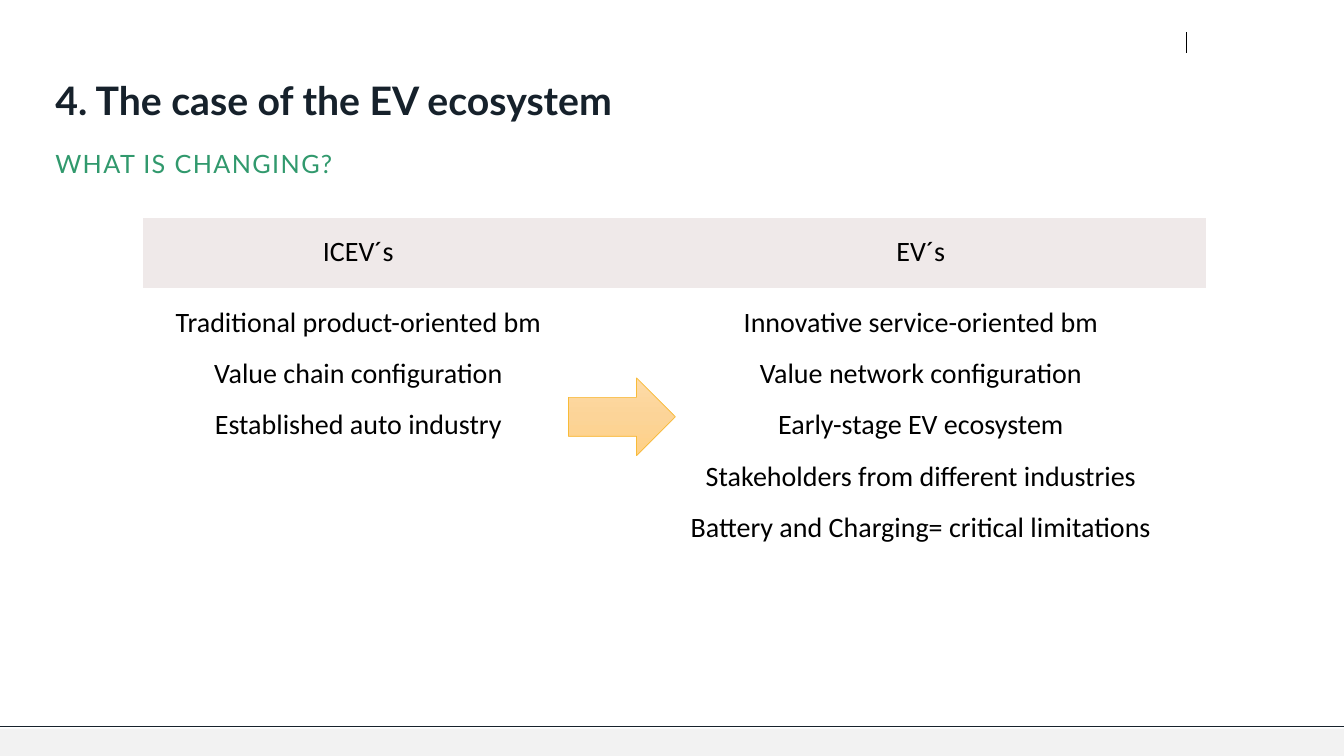
from copy import deepcopy

from lxml.etree import SubElement
from pptx import Presentation
from pptx.dml.color import RGBColor
from pptx.enum.shapes import MSO_CONNECTOR, MSO_SHAPE
from pptx.enum.text import MSO_ANCHOR, PP_ALIGN
from pptx.oxml.ns import qn
from pptx.util import Inches, Pt

NAVY = RGBColor(0x16, 0x21, 0x2B)
GREEN = RGBColor(0x31, 0x99, 0x6D)
BLACK = RGBColor(0x00, 0x00, 0x00)
FOOTER_GREY = RGBColor(0xF2, 0xF2, 0xF2)
HEADER_GREY = RGBColor(0xEF, 0xE9, 0xE9)
ARROW_EDGE = RGBColor(0xF8, 0xBB, 0x38)
ARROW_BLEND = [
    RGBColor(0xFE, 0xDB, 0xA7),
    RGBColor(0xFC, 0xD4, 0x98),
    RGBColor(0xFF, 0xD0, 0x85),
]
PLAIN_TABLE = "{2D5ABB26-0587-4C30-8999-92F81FD0307C}"

COMPARISON = [
    (["ICEV´s"], [], ["EV´s"]),
    (
        [
            "Traditional product-oriented bm",
            "Value chain configuration",
            "Established auto industry",
        ],
        [],
        [
            "Innovative service-oriented bm",
            "Value network configuration",
            "Early-stage EV ecosystem",
            "Stakeholders from different industries",
            "Battery and Charging= critical limitations",
        ],
    ),
]


class SlideBuilder:
    heading_font = "Lato"
    body_font = "Calibri"
    body_size = 20

    def __init__(self, deck):
        self.column = deck.slide_width / 100
        self.row = deck.slide_height / 100
        self.slide = deck.slides.add_slide(deck.slide_layouts[6])

    def across(self, columns):
        return round(columns * self.column)

    def down(self, rows):
        return round(rows * self.row)

    def place(self, left, top, width, height):
        return self.across(left), self.down(top), self.across(width), self.down(height)

    def style(self, paragraph, font, size, color, bold=False):
        for run in paragraph.runs:
            run.font.name = font
            run.font.size = Pt(size)
            run.font.bold = bold
            run.font.color.rgb = color

    def band(self, area, color):
        band = self.slide.shapes.add_shape(MSO_SHAPE.RECTANGLE, *self.place(*area))
        band.shadow.inherit = False
        band.fill.solid()
        band.fill.fore_color.rgb = color
        band.line.fill.background()

    def rule(self, start, end, color):
        rule = self.slide.shapes.add_connector(
            MSO_CONNECTOR.STRAIGHT, *self.place(*start, *end)
        )
        rule.line.color.rgb = color
        rule.line.width = Pt(1)
        SubElement(rule._element.spPr, qn("a:effectLst"))

    def heading(self, area, wording, size, color, bold=False, anchor=MSO_ANCHOR.TOP, tracking=0):
        frame = self.slide.shapes.add_textbox(*self.place(*area)).text_frame
        frame.word_wrap = True
        frame.vertical_anchor = anchor
        frame.text = wording
        line = frame.paragraphs[0]
        line.line_spacing = 0.9
        self.style(line, self.heading_font, size, color, bold)
        if tracking:
            line.runs[0].font._element.set("spc", str(tracking * 100))

    def comparison(self, left, top, widths, heights, rows):
        area = self.place(left, top, sum(widths), sum(heights))
        table = self.slide.shapes.add_table(len(rows), len(widths), *area).table
        table.horz_banding = False
        table._tbl.tblPr.find(qn("a:tableStyleId")).text = PLAIN_TABLE
        for column, width in zip(table.columns, widths):
            column.width = self.across(width)
        for row, height in zip(table.rows, heights):
            row.height = self.down(height)
        for row_index, row in enumerate(rows):
            for column_index, points in enumerate(row):
                self.table_cell(table.cell(row_index, column_index), points, row_index == 0)

    def table_cell(self, cell, points, is_header):
        cell.margin_left = cell.margin_right = Inches(0.07)
        cell.margin_top = cell.margin_bottom = 0
        if is_header:
            cell.fill.solid()
            cell.fill.fore_color.rgb = HEADER_GREY
        else:
            cell.fill.background()
        cell.text_frame.text = "\n".join(points)
        for point in cell.text_frame.paragraphs:
            point.alignment = PP_ALIGN.CENTER
            point.line_spacing = 1.5
            self.style(point, self.body_font, self.body_size, BLACK)

    def arrow(self, area, blend, edge):
        arrow = self.slide.shapes.add_shape(MSO_SHAPE.RIGHT_ARROW, *self.place(*area))
        arrow.shadow.inherit = False
        arrow.fill.gradient()
        arrow.fill.gradient_angle = 270
        stops = arrow._element.spPr.find(qn("a:gradFill")).find(qn("a:gsLst"))
        stops.insert(1, deepcopy(stops[0]))
        for index, (stop, color) in enumerate(zip(arrow.fill.gradient_stops, blend)):
            stop.position = index / (len(blend) - 1)
            stop.color.rgb = color
        arrow.line.color.rgb = edge
        arrow.line.width = Pt(0.5)


def main():
    deck = Presentation()
    deck.slide_width = Inches(13.33)
    deck.slide_height = Inches(7.5)
    page = SlideBuilder(deck)
    page.band((0, 96.4, 100, 3.6), FOOTER_GREY)
    page.rule((0, 96.13), (100, 96.13), NAVY)
    page.rule((88.28, 4.27), (88.28, 7.07), BLACK)
    page.heading(
        (3.38, 5.33, 74.1, 11.73), "4. The case of the EV ecosystem",
        28, NAVY, bold=True, anchor=MSO_ANCHOR.BOTTOM,
    )
    page.heading((3.38, 19.47, 93.23, 9.33), "WHAT IS CHANGING?", 18, GREEN, tracking=1)
    page.comparison(10.65, 28.8, [32.03, 4.65, 42.38], [9.33, 51.73], COMPARISON)
    page.arrow((42.3, 50, 7.95, 10.27), ARROW_BLEND, ARROW_EDGE)
    deck.save("out.pptx")


if __name__ == "__main__":
    main()
